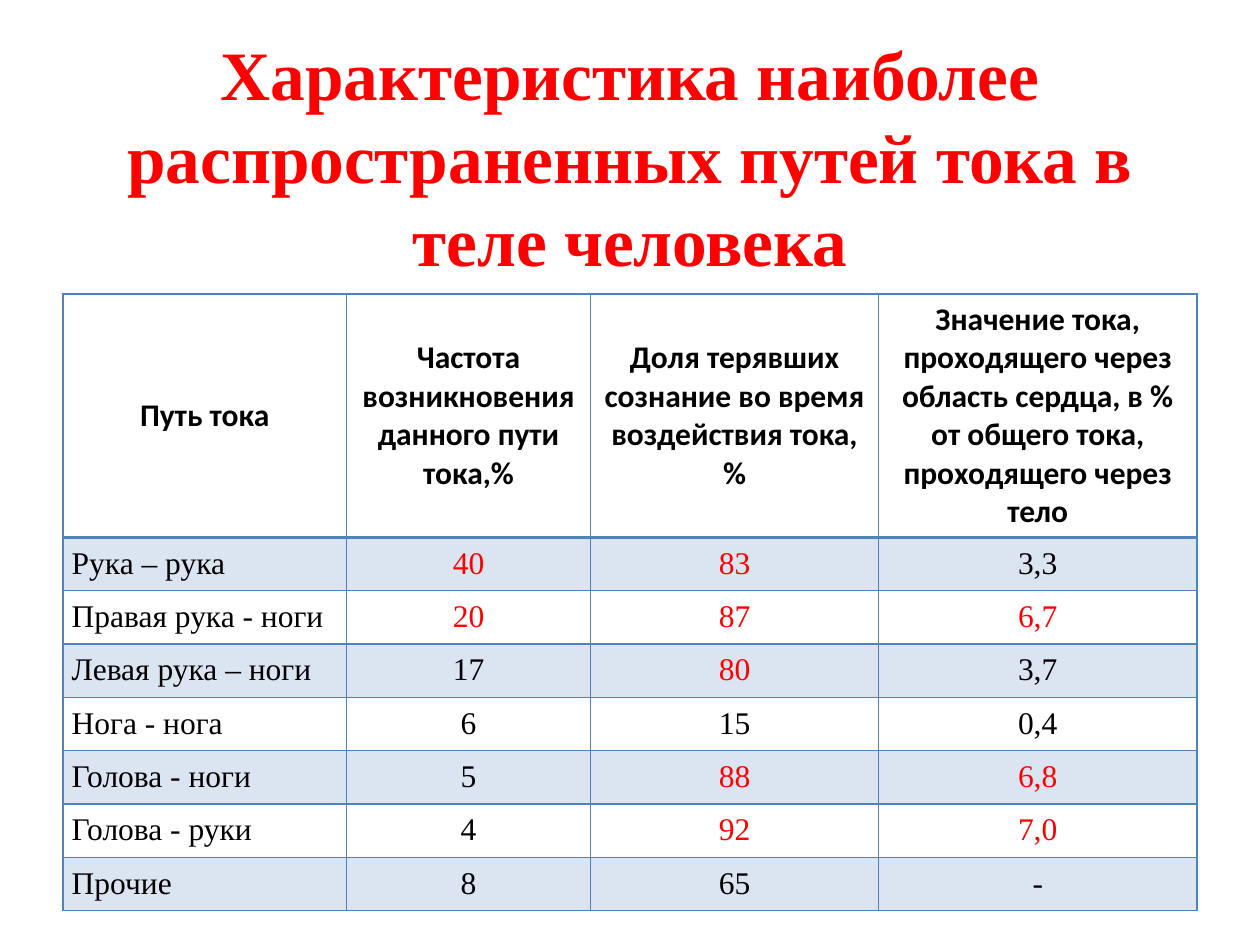
from lxml.etree import SubElement
from pptx import Presentation
from pptx.dml.color import RGBColor
from pptx.enum.text import MSO_ANCHOR, MSO_AUTO_SIZE, PP_ALIGN
from pptx.oxml.ns import qn
from pptx.util import Pt

RED, BLACK, BLUE = "FF0000", "000000", "4F81BD"
SERIF, SANS = "Times New Roman", "Calibri"

TITLE = "Характеристика наиболее распространенных путей тока в теле человека"
HEADINGS = (
    "Путь тока",
    "Частота возникновения данного пути тока,%",
    "Доля терявших сознание во время воздействия тока,%",
    "Значение тока, проходящего через область сердца, в % от общего тока, "
    "проходящего через тело",
)
CURRENT_PATHS = (
    ("Рука – рука", "40", "83", "3,3"),
    ("Правая рука - ноги", "20", "87", "6,7"),
    ("Левая рука – ноги", "17", "80", "3,7"),
    ("Нога - нога", "6", "15", "0,4"),
    ("Голова - ноги", "5", "88", "6,8"),
    ("Голова - руки", "4", "92", "7,0"),
    ("Прочие", "8", "65", "-"),
)
DANGEROUS = {"40", "20", "83", "87", "80", "88", "92", "6,7", "6,8", "7,0"}

COLUMN_WIDTHS = (162, 139.5, 164.5, 182)
HEADING_HEIGHT, PATH_HEIGHT = 139, 30.5


def rgb(hex_color):
    return RGBColor.from_string(hex_color)


def write(frame, text, font_name, size, color, bold, align):
    frame.text = text
    paragraph = frame.paragraphs[0]
    paragraph.alignment = align
    font = paragraph.runs[0].font
    font.name, font.size, font.bold = font_name, Pt(size), bold
    font.color.rgb = rgb(color)


def add_title(slide):
    title = slide.shapes.title
    title.left, title.top, title.width, title.height = Pt(36), Pt(21.6), Pt(648), Pt(134.6)
    frame = title.text_frame
    frame.word_wrap = True
    frame.auto_size = MSO_AUTO_SIZE.NONE
    frame.vertical_anchor = MSO_ANCHOR.MIDDLE
    write(frame, TITLE, SERIF, 39.6, RED, True, PP_ALIGN.CENTER)


def set_borders(cell, top, bottom):
    """Draw all four sides; must come before the fill in the cell's XML."""
    properties = cell._tc.get_or_add_tcPr()
    for side, width in (("L", 1), ("R", 1), ("T", top), ("B", bottom)):
        line = SubElement(properties, qn(f"a:ln{side}"), w=str(Pt(width)))
        fill = SubElement(line, qn("a:solidFill"))
        SubElement(fill, qn("a:srgbClr"), val=BLUE)


def set_fill(cell, tinted):
    if not tinted:
        cell.fill.background()
        return
    cell.fill.solid()
    cell.fill.fore_color.rgb = rgb(BLUE)
    color = cell._tc.tcPr.find(qn("a:solidFill")).find(qn("a:srgbClr"))
    SubElement(color, qn("a:alpha"), val="20000")


def format_heading(cell, text):
    set_borders(cell, top=1, bottom=2)
    set_fill(cell, tinted=False)
    cell.vertical_anchor = MSO_ANCHOR.MIDDLE
    write(cell.text_frame, text, SANS, 18, BLACK, True, PP_ALIGN.CENTER)


def format_value(cell, text, row, column):
    set_borders(cell, top=2 if row == 1 else 1, bottom=1)
    set_fill(cell, tinted=row % 2 == 1)
    cell.margin_left = cell.margin_right = cell.margin_top = cell.margin_bottom = Pt(5)
    color = RED if text in DANGEROUS else BLACK
    align = PP_ALIGN.CENTER if column else PP_ALIGN.LEFT
    write(cell.text_frame, text, SERIF, 18, color, False, align)


def add_paths_table(slide):
    height = HEADING_HEIGHT + PATH_HEIGHT * len(CURRENT_PATHS)
    table = slide.shapes.add_table(
        len(CURRENT_PATHS) + 1, len(HEADINGS),
        Pt(36), Pt(168), Pt(sum(COLUMN_WIDTHS)), Pt(height),
    ).table
    for column, width in zip(table.columns, COLUMN_WIDTHS):
        column.width = Pt(width)
    for row in table.rows:
        row.height = Pt(PATH_HEIGHT)
    table.rows[0].height = Pt(HEADING_HEIGHT)

    for column, heading in enumerate(HEADINGS):
        format_heading(table.cell(0, column), heading)
    for row, values in enumerate(CURRENT_PATHS, start=1):
        for column, value in enumerate(values):
            format_value(table.cell(row, column), value, row, column)


def main():
    presentation = Presentation()
    presentation.slide_width, presentation.slide_height = Pt(720), Pt(540)
    slide = presentation.slides.add_slide(presentation.slide_layouts[5])
    add_title(slide)
    add_paths_table(slide)
    presentation.save("out.pptx")


if __name__ == "__main__":
    main()
